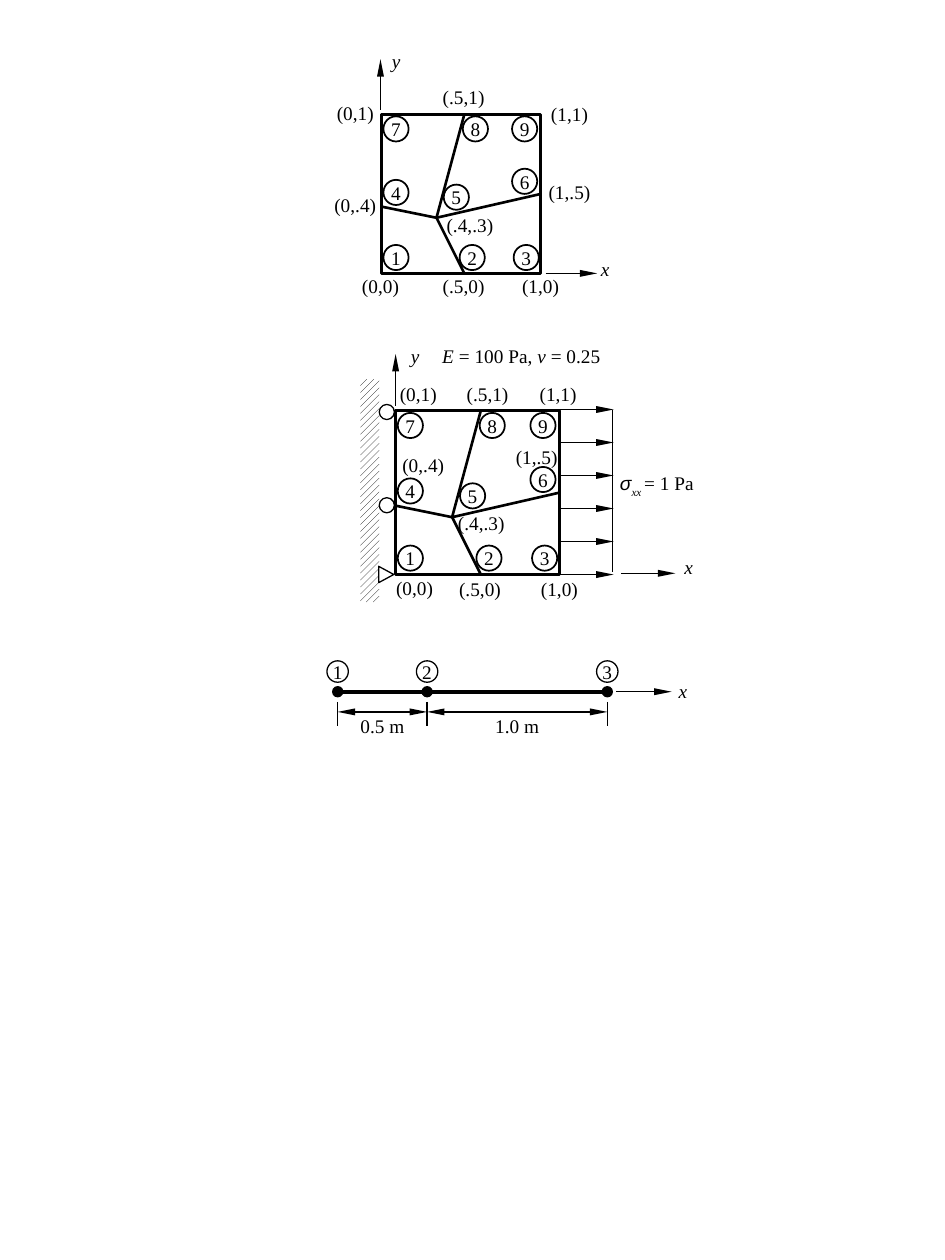
from lxml.etree import SubElement
from pptx import Presentation
from pptx.dml.color import RGBColor
from pptx.enum.dml import MSO_PATTERN
from pptx.enum.shapes import MSO_CONNECTOR, MSO_SHAPE
from pptx.enum.text import MSO_ANCHOR, PP_ALIGN
from pptx.oxml.ns import qn
from pptx.util import Cm, Pt

BLACK = RGBColor(0, 0, 0)
WHITE = RGBColor(255, 255, 255)
SERIF = "Times New Roman"
TEXT_SIZE = 11
THIN, MEDIUM, THICK, ROD = 0.75, 1, 1.5, 2.25

# Shares of the side of the square, measured from its top left corner
CENTRE = (0.345, 0.65)
CROSS_LINES = (
    ((0.52, 1), CENTRE, (0.52, 0)),
    ((0, 0.58), CENTRE, (1, 0.5)),
)
NODE_CENTRES = (
    (0.09, 0.9), (0.57, 0.9), (0.91, 0.9),
    (0.09, 0.49), (0.47, 0.52), (0.9, 0.42),
    (0.09, 0.09), (0.59, 0.09), (0.9, 0.09),
)
NODE_SIZE = 0.2


def inch(value):
    """Turn inches, the unit of the drawing, into a length."""
    return Cm(value * 2.54)


def style_line(shape, width):
    shape.line.color.rgb = BLACK
    shape.line.width = Pt(width)


def write(shape, runs, align):
    """Fill a shape with runs given as (text, italic, font, baseline)."""
    frame = shape.text_frame
    frame.margin_left = frame.margin_right = 0
    frame.margin_top = frame.margin_bottom = 0
    frame.word_wrap = False
    paragraph = frame.paragraphs[0]
    paragraph.alignment = align
    for text, italic, font, baseline in runs:
        run = paragraph.add_run()
        run.text = text
        run.font.name = font
        run.font.size = Pt(TEXT_SIZE)
        run.font.italic = italic
        run.font.color.rgb = BLACK
        if baseline:
            run.font._element.set("baseline", str(baseline))


def plain(text):
    return text, False, SERIF, 0


def italic(text):
    return text, True, SERIF, 0


def add_text(group, runs, left, top, width, height=0.21, align=PP_ALIGN.LEFT):
    box = group.shapes.add_textbox(inch(left), inch(top), inch(width), inch(height))
    write(box, runs, align)


def add_labels(group, labels):
    """Place centred labels given as (text, centre x, top)."""
    width = 0.5
    for text, centre, top in labels:
        add_text(group, [plain(text)], centre - width / 2, top, width,
                 align=PP_ALIGN.CENTER)


def add_shape(group, kind, left, top, width, height, fill=None, line=THIN):
    shape = group.shapes.add_shape(
        kind, inch(left), inch(top), inch(width), inch(height))
    shape.shadow.inherit = False
    if fill is None:
        shape.fill.background()
    else:
        shape.fill.solid()
        shape.fill.fore_color.rgb = fill
    style_line(shape, line)
    return shape


def add_circle(group, x, y, size, fill=None, line=THIN):
    return add_shape(group, MSO_SHAPE.OVAL, x - size / 2, y - size / 2,
                     size, size, fill, line)


def add_node(group, number, x, y, size=NODE_SIZE, line=MEDIUM):
    circle = add_circle(group, x, y, size, line=line)
    write(circle, [plain(str(number))], PP_ALIGN.CENTER)
    circle.text_frame.vertical_anchor = MSO_ANCHOR.MIDDLE


def add_line(group, start, end, width=THIN, arrows=()):
    """Draw a line; arrows names its ends with heads: headEnd, tailEnd."""
    connector = group.shapes.add_connector(
        MSO_CONNECTOR.STRAIGHT, *(inch(value) for value in start + end))
    style_line(connector, width)
    for arrow in arrows:
        SubElement(connector.line._get_or_add_ln(), qn("a:" + arrow),
                   type="triangle", w="sm", len="lg")
    SubElement(connector._element.spPr, qn("a:effectLst"))


def add_arrow(group, start, end):
    add_line(group, start, end, arrows=["tailEnd"])


def add_polyline(group, points):
    points = [(inch(x), inch(y)) for x, y in points]
    builder = group.shapes.build_freeform(*points[0])
    builder.add_line_segments(points[1:], close=False)
    shape = builder.convert_to_shape()
    shape.shadow.inherit = False
    shape.fill.background()
    style_line(shape, THICK)


def add_mesh(group, left, top, side):
    """Draw the square of four elements with its nine numbered nodes."""
    def place(point):
        return left + point[0] * side, top + point[1] * side

    add_shape(group, MSO_SHAPE.RECTANGLE, left, top, side, side, WHITE, THICK)
    for points in CROSS_LINES:
        add_polyline(group, [place(point) for point in points])
    for number, centre in enumerate(NODE_CENTRES, start=1):
        add_node(group, number, *place(centre))


def draw_patch(group):
    add_mesh(group, 3.03, 0.91, 1.26)
    add_arrow(group, (4.33, 2.17), (4.74, 2.17))
    add_arrow(group, (3.02, 0.87), (3.02, 0.47))
    add_text(group, [italic("x")], 4.77, 2.04, 0.14, 0.26)
    add_text(group, [italic("y")], 3.11, 0.39, 0.14, 0.26)
    add_labels(group, [
        ("(0,0)", 3.02, 2.18), ("(.5,0)", 3.68, 2.18), ("(1,0)", 4.29, 2.18),
        ("(0,.4)", 2.82, 1.53), ("(.4,.3)", 3.73, 1.69), ("(1,.5)", 4.52, 1.43),
        ("(0,1)", 2.82, 0.8), ("(.5,1)", 3.68, 0.68), ("(1,1)", 4.52, 0.81),
    ])


def draw_loaded_patch(group):
    wall = add_shape(group, MSO_SHAPE.RECTANGLE, 2.86, 3.01, 0.15, 1.77)
    wall.fill.patterned()
    wall.fill.pattern = MSO_PATTERN.WIDE_UPWARD_DIAGONAL
    wall.fill.fore_color.rgb = BLACK
    wall.fill.back_color.rgb = WHITE
    wall.line.fill.background()
    for roller_y in (3.27, 4.01):
        add_circle(group, 3.07, roller_y, 0.12, WHITE)
    pin = add_shape(group, MSO_SHAPE.ISOSCELES_TRIANGLE, 3, 4.5, 0.13, 0.12, WHITE)
    pin.rotation = 90

    add_mesh(group, 3.14, 3.26, 1.3)
    add_arrow(group, (4.93, 4.55), (5.36, 4.55))
    add_arrow(group, (3.14, 3.22), (3.14, 2.81))
    add_text(group, [italic("x")], 5.39, 4.41, 0.15, 0.27, PP_ALIGN.CENTER)
    add_text(group, [italic("y")], 3.22, 2.73, 0.15, 0.27, PP_ALIGN.CENTER)
    add_labels(group, [
        ("(0,0)", 3.29, 4.57), ("(.5,0)", 3.81, 4.58), ("(1,0)", 4.44, 4.58),
        ("(0,.4)", 3.36, 3.6), ("(.4,.3)", 3.82, 4.06), ("(1,.5)", 4.26, 3.53),
        ("(0,1)", 3.32, 3.03), ("(.5,1)", 3.87, 3.03), ("(1,1)", 4.43, 3.03),
    ])

    load_count, load_top, load_bottom = 6, 3.25, 4.56
    step = (load_bottom - load_top) / (load_count - 1)
    for index in range(load_count):
        load_y = load_top + index * step
        add_arrow(group, (4.44, load_y), (4.87, load_y))
    add_line(group, (4.86, load_top), (4.86, 4.54))
    add_text(group, [("σ", True, "Arial", 0), ("xx ", True, SERIF, -30000),
                     plain("= 1 Pa")], 4.92, 3.74, 0.75, 0.26)
    add_text(group, [italic("E"), plain(" = 100 Pa, "), italic("ν"),
                     plain(" = 0.25")], 3.51, 2.73, 1.71, 0.27)


def draw_rod(group):
    rod_y, dimension_y = 5.49, 5.65
    node_xs = (2.68, 3.39, 4.82)
    add_line(group, (node_xs[0], rod_y), (node_xs[-1], rod_y), ROD)
    for number, x in enumerate(node_xs, start=1):
        add_circle(group, x, rod_y, 0.08, BLACK)
        add_node(group, number, x, 5.33, 0.17, THIN)
        add_line(group, (x, 5.57), (x, 5.76))
    for text, start, end in zip(("0.5 m", "1.0 m"), node_xs, node_xs[1:]):
        add_line(group, (start, dimension_y), (end, dimension_y),
                 arrows=["headEnd", "tailEnd"])
        add_labels(group, [(text, (start + end) / 2, 5.67)])
    add_arrow(group, (4.89, rod_y), (5.33, rod_y))
    add_text(group, [italic("x")], 5.32, 5.39, 0.2, 0.17, PP_ALIGN.CENTER)


def main():
    presentation = Presentation()
    presentation.slide_width = inch(7.5)
    presentation.slide_height = inch(10)
    slide = presentation.slides.add_slide(presentation.slide_layouts[6])
    for draw in (draw_patch, draw_loaded_patch, draw_rod):
        draw(slide.shapes.add_group_shape())
    presentation.save("out.pptx")


if __name__ == "__main__":
    main()
